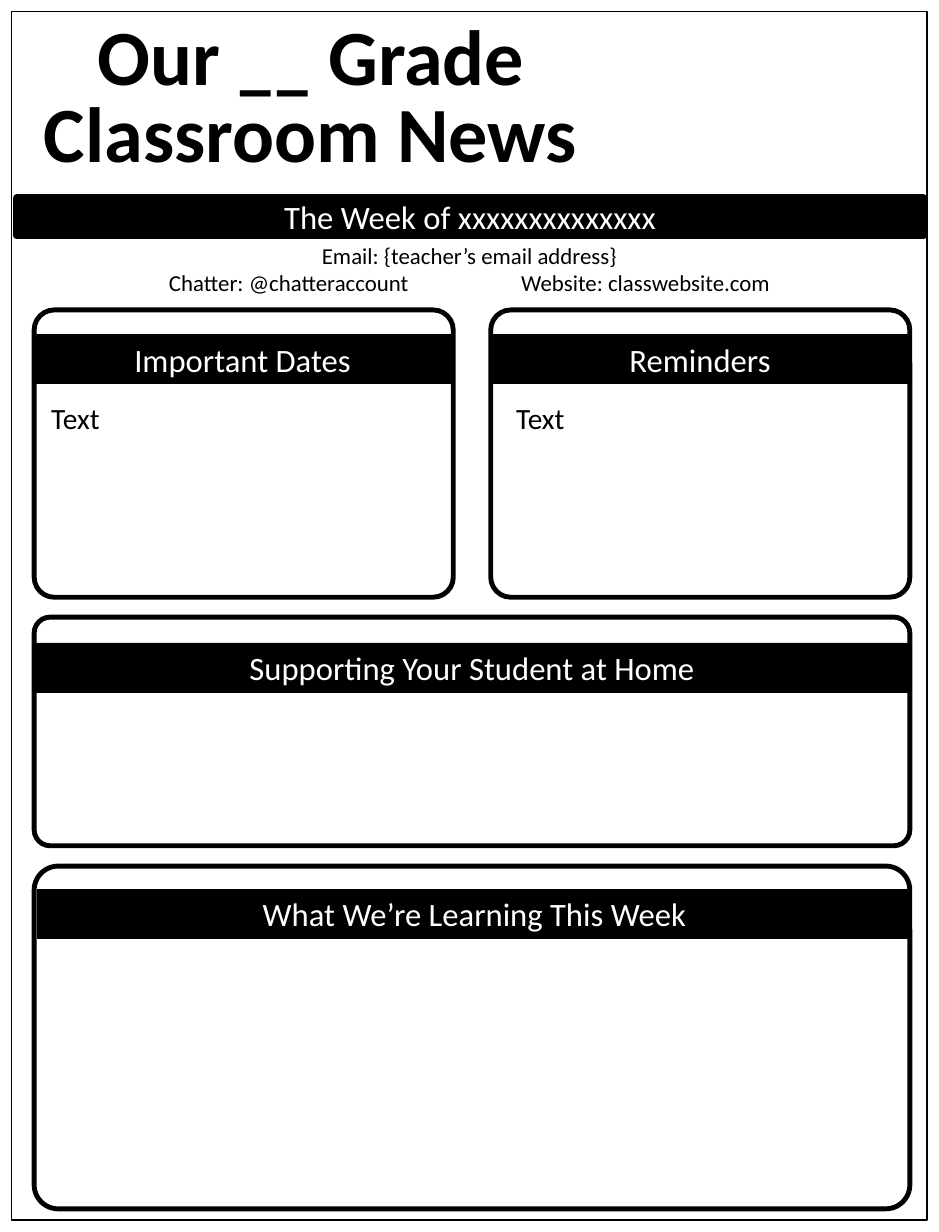
from dataclasses import dataclass
from pptx import Presentation
from pptx.dml.color import RGBColor as RGB
from pptx.enum.shapes import MSO_SHAPE as Kind
from pptx.enum.text import MSO_ANCHOR as Anchor, MSO_AUTO_SIZE as Fit, PP_ALIGN as Align
from pptx.util import Cm, Pt


@dataclass(frozen=True)
class Theme:
    ink: RGB = RGB(0, 0, 0)
    paper: RGB = RGB(255, 255, 255)
    font: str = "Calibri"
    blank: str = "Lato"
    title: int = 48
    lead: float = 47.6
    head: int = 20
    body: int = 18
    note: int = 14


class Page:
    def __init__(self, slide, theme):
        self.slide = slide
        self.theme = theme

    def style(self, par, size, color, align):
        par.alignment = align
        par.font.size = Pt(size)
        par.font.name = self.theme.font
        par.font.color.rgb = color

    def box(self, kind, area, line, fill=None, adj=None):
        shape = self.slide.shapes.add_shape(kind, *map(Cm, area))
        shape.shadow.inherit = False
        if fill is None:
            shape.fill.background()
        else:
            shape.fill.solid()
            shape.fill.fore_color.rgb = fill
        shape.line.color.rgb = self.theme.ink
        shape.line.width = Pt(line)
        if adj is not None:
            shape.adjustments[0] = adj
        return shape

    def band(self, kind, area, line, text, adj=None):
        shape = self.box(kind, area, line, self.theme.ink, adj)
        frame = shape.text_frame
        frame.vertical_anchor = Anchor.MIDDLE
        frame.text = text
        self.style(frame.paragraphs[0], self.theme.head, self.theme.paper, Align.CENTER)

    def text(self, area, lines, size, align=Align.LEFT):
        frame = self.slide.shapes.add_textbox(*map(Cm, area)).text_frame
        frame.word_wrap = True
        frame.auto_size = Fit.SHAPE_TO_FIT_TEXT
        for i, line in enumerate(lines):
            par = frame.add_paragraph() if i else frame.paragraphs[0]
            self.style(par, size, self.theme.ink, align)
            for part in line:
                par.add_run().text = part
        return frame

    def title(self, area, lines):
        frame = self.text(area, lines, self.theme.title, Align.CENTER)
        for par in frame.paragraphs:
            par.font.bold = True
            par.line_spacing = Pt(self.theme.lead)
        frame.paragraphs[0].runs[1].font.name = self.theme.blank

    def card(self, head, area, bar, fill=None):
        self.box(Kind.ROUNDED_RECTANGLE, area, 3, fill, 0.07)
        left, top, wide = bar
        self.band(Kind.PENTAGON, (left, top, wide, 1.07), 0.5, head, 0)


def main():
    deck = Presentation()
    deck.slide_width, deck.slide_height = Cm(20.32), Cm(26.67)
    theme = Theme()
    page = Page(deck.slides.add_slide(deck.slide_layouts[6]), theme)

    page.box(Kind.RECTANGLE, (0.25, 0.25, 19.81, 26.16), 1)
    page.band(Kind.RECTANGLE, (0.36, 4.29, 19.63, 0.81), 4.5, "The Week of xxxxxxxxxxxxxx")
    page.title((0.36, 0.38, 12.73, 3.76), [("Our ", "__", " Grade"), ("Classroom News",)])
    page.text((0, 5.11, 20.32, 1.45), [
        ("Email: {teacher’s email address}",),
        ("Chatter: @chatteraccount\t\tWebsite: classwebsite.com",),
    ], theme.note, Align.CENTER)

    cards = [
        ("Important Dates", (0.74, 6.71, 9.07, 6.22), (0.74, 7.24, 9.02), None),
        ("Reminders", (10.62, 6.71, 9.07, 6.22), (10.64, 7.24, 9.02), None),
        ("Supporting Your Student at Home", (0.74, 13.36, 18.95, 4.95),
         (0.74, 13.92, 18.95), theme.paper),
        ("What We’re Learning This Week", (0.74, 18.75, 18.95, 7.42),
         (0.81, 19.25, 18.92), theme.paper),
    ]
    for card in cards:
        page.card(*card)
    for left, wide in ((0.86, 8.79), (10.92, 8.31)):
        page.text((left, 8.53, wide, 1.02), [("Text",)], theme.body)

    deck.save("out.pptx")


if __name__ == "__main__":
    main()
